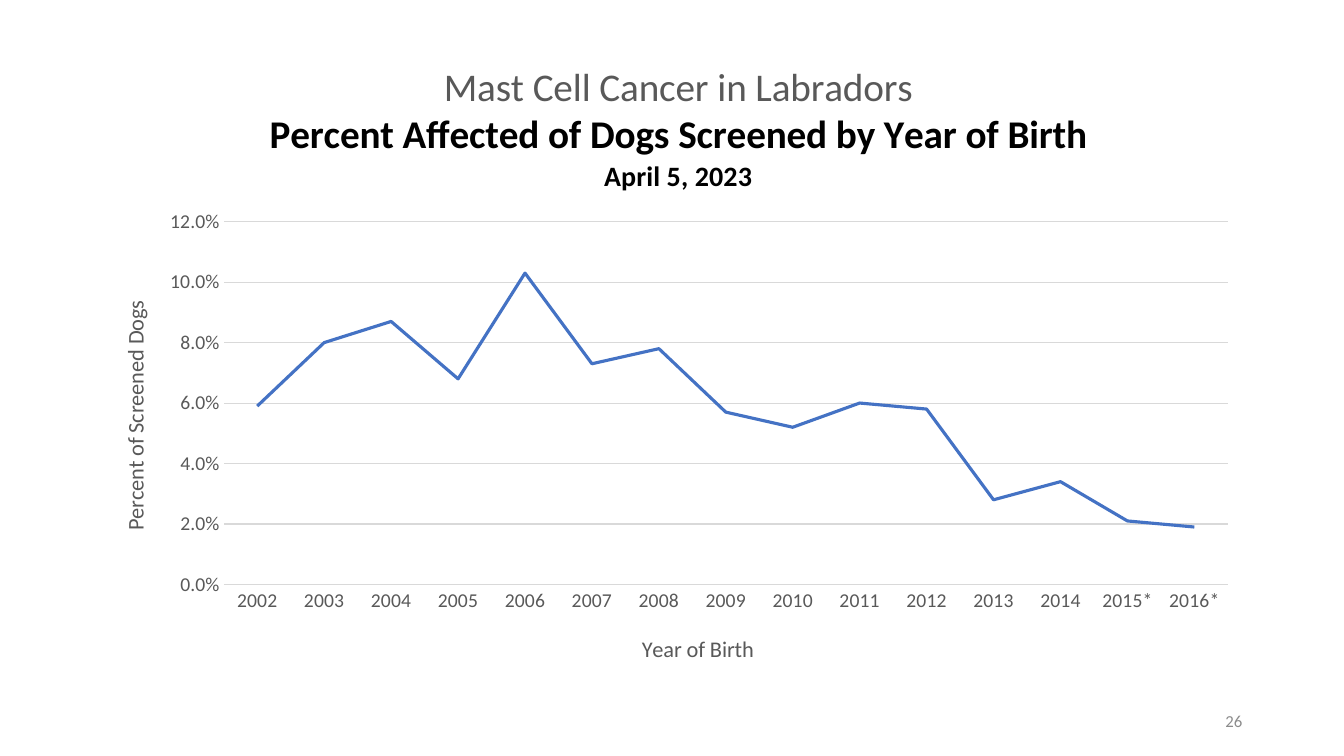
from lxml import etree
from pptx import Presentation
from pptx import util as u
from pptx.chart.data import CategoryChartData
from pptx.dml.color import RGBColor
from pptx.enum import chart as c, text
from pptx.oxml.ns import qn

WIDTH, HEIGHT = 13.33, 7.5
FONT, GREY, BLACK, RULE, BLUE = "Calibri", "595959", "000000", "D9D9D9", "4472C4"

# text, size, colour, bold
HEADING = [
    ("Mast Cell Cancer in Labradors", 28, GREY, False),
    ("Percent Affected of Dogs Screened by Year of Birth", 28, BLACK, True),
    ("April 5, 2023", 20, BLACK, True),
]
YEAR_TITLE = [("Year of Birth", 16, GREY, False)]
PERCENT_TITLE = [("Percent of Screened Dogs", 16, GREY, False)]
YEARS = [str(year) for year in range(2002, 2015)] + ["2015*", "2016*"]
SHARES = [0.059, 0.08, 0.087, 0.068, 0.103, 0.073, 0.078, 0.057,
          0.052, 0.06, 0.058, 0.028, 0.034, 0.021, 0.019]
PAGE_NUMBER = "26"


def color(hex_code):
    return RGBColor.from_string(hex_code)


def style(font, size, hex_code, bold=False):
    font.name, font.size, font.bold = FONT, u.Pt(size), bold
    font.color.rgb = color(hex_code)


def rule(line, hex_code, width):
    line.color.rgb = color(hex_code)
    line.width = u.Pt(width)


def place(element, index, **shares):
    """Fix a chart part at the given shares of the chart's size."""
    for old in element.findall(qn("c:layout")):
        element.remove(old)
    layout = etree.Element(qn("c:layout"))
    manual = etree.SubElement(layout, qn("c:manualLayout"))
    if "w" in shares:
        etree.SubElement(manual, qn("c:layoutTarget"), val="inner")
    for side in "xy":
        etree.SubElement(manual, qn(f"c:{side}Mode"), val="edge")
    for side, share in shares.items():
        etree.SubElement(manual, qn(f"c:{side}"), val=str(share))
    element.insert(index, layout)


def write_title(title, lines, x, y):
    frame = title.text_frame
    for number, (words, size, hex_code, bold) in enumerate(lines):
        para = frame.add_paragraph() if number else frame.paragraphs[0]
        style(para.font, size, hex_code, bold)
        span = para.add_run()
        span.text = words
        style(span.font, size, hex_code, bold)
    place(title._element, 1, x=x, y=y)


def add_cancer_chart(page):
    data = CategoryChartData(number_format="0.0%")
    data.categories = YEARS
    data.add_series("Series 1", SHARES)
    chart = page.shapes.add_chart(
        c.XL_CHART_TYPE.LINE, u.Inches(0.92), u.Inches(0.4),
        u.Inches(11.5), u.Inches(6.36), data).chart
    style(chart.font, 10, BLACK)
    chart.has_legend = False
    chart.plots[0].vary_by_categories = False
    write_title(chart.chart_title, HEADING, 0.15, 0.03)
    chart.chart_title.include_in_layout = False

    series = chart.plots[0].series[0]
    series.smooth = False
    series.marker.style = c.XL_MARKER_STYLE.NONE
    rule(series.format.line, BLUE, 2.25)

    years, percents = chart.category_axis, chart.value_axis
    for axis, lines, x, y in ((years, YEAR_TITLE, 0.47, 0.92),
                              (percents, PERCENT_TITLE, 0.02, 0.4)):
        axis.major_tick_mark = axis.minor_tick_mark = c.XL_TICK_MARK.NONE
        style(axis.tick_labels.font, 14, GREY)
        write_title(axis.axis_title, lines, x, y)
    rule(years.format.line, RULE, 0.75)
    percents.format.line.fill.background()
    percents.minimum_scale, percents.maximum_scale = 0, 0.12
    percents.major_unit = 0.02
    percents.tick_labels.number_format = "0.0%"
    percents.tick_labels.number_format_is_linked = False
    rule(percents.major_gridlines.format.line, RULE, 0.75)
    place(chart._chartSpace.chart.plotArea, 0, x=0.113, y=0.283, w=0.866, h=0.566)


def add_page_number(page):
    box = page.shapes.add_textbox(
        u.Inches(9.42), u.Inches(6.95), u.Inches(3), u.Inches(0.4))
    frame = box.text_frame
    frame.word_wrap = True
    frame.vertical_anchor = text.MSO_ANCHOR.MIDDLE
    para = frame.paragraphs[0]
    para.alignment = text.PP_ALIGN.RIGHT
    span = para.add_run()
    span.text = PAGE_NUMBER
    style(span.font, 12, "8C8C8C")


def main():
    deck = Presentation()
    deck.slide_width, deck.slide_height = u.Inches(WIDTH), u.Inches(HEIGHT)
    page = deck.slides.add_slide(deck.slide_layouts[6])
    add_cancer_chart(page)
    add_page_number(page)
    deck.save("out.pptx")


if __name__ == "__main__":
    main()
